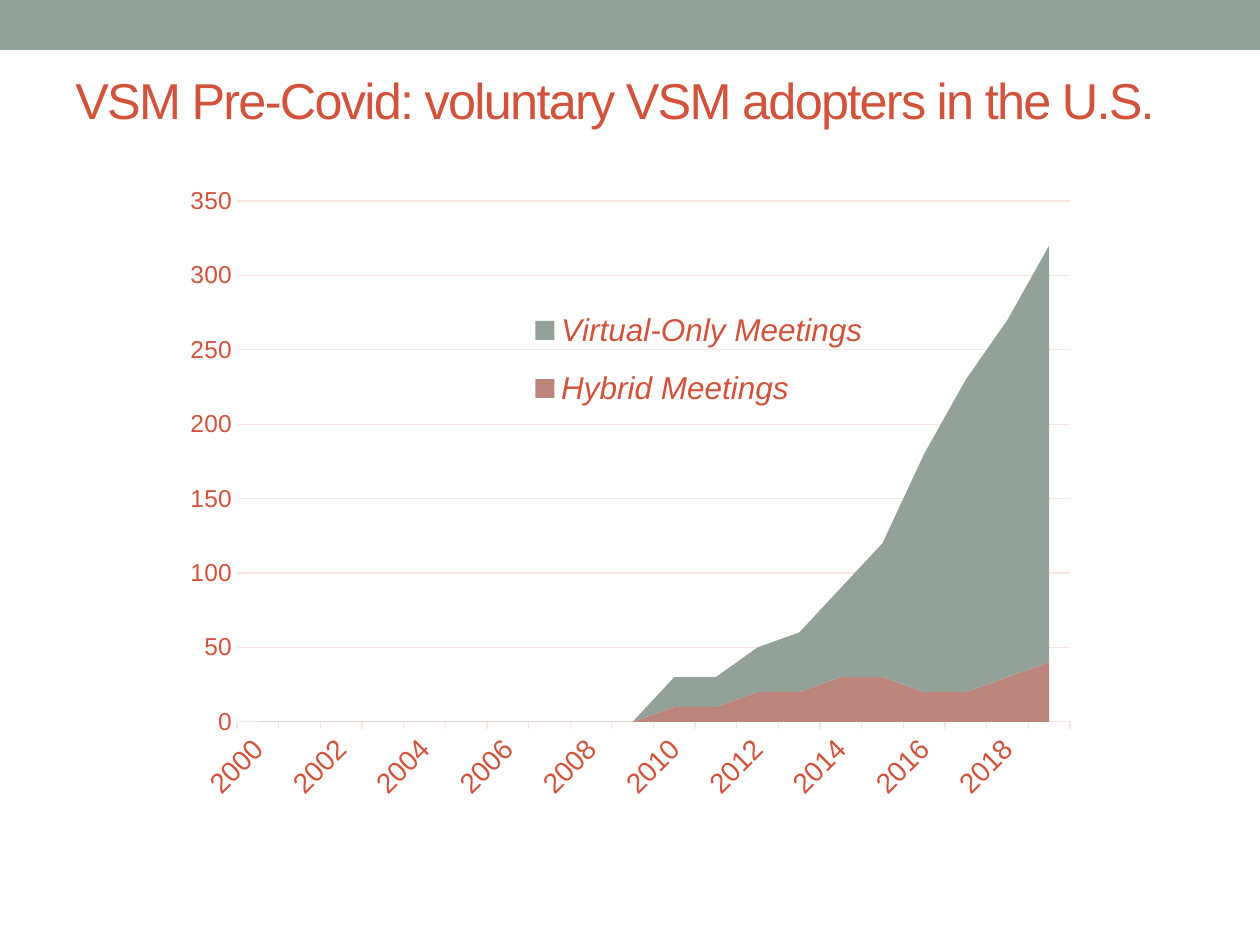
from dataclasses import dataclass

from lxml import etree
from pptx import Presentation
from pptx import util as u
from pptx.chart.data import CategoryChartData
from pptx.dml.color import RGBColor
from pptx.enum import chart as ch, shapes, text
from pptx.oxml.ns import qn

SCALE = 914400 // 126


@dataclass(frozen=True)
class Theme:
    font: str = "Arial"
    sage: str = "93A299"
    rose: str = "BD867C"
    red: str = "D2533C"
    grid: str = "F8E5E2"
    title: float = 28.8
    legend: int = 18
    years: int = 16
    count: int = 14
    hair: float = 0.75


def px(*nums):
    return [u.Emu(n * SCALE) for n in nums]


def put(obj, **vals):
    for name, val in vals.items():
        setattr(obj, name, val)


def place(node, spot, box, frame, inner=False):
    """Fix a chart part at box, in px, inside the chart frame."""
    for old in node.findall(qn("c:layout")):
        node.remove(old)
    layout = etree.Element(qn("c:layout"))
    manual = etree.SubElement(layout, qn("c:manualLayout"))
    left, top, wide, high = frame
    x, y, w, h = box
    vals = {"layoutTarget": "inner"} if inner else {}
    vals |= {"xMode": "edge", "yMode": "edge",
             "x": (x - left) / wide, "y": (y - top) / high,
             "w": w / wide, "h": h / high}
    for tag, val in vals.items():
        val = val if isinstance(val, str) else f"{val:.4f}"
        etree.SubElement(manual, qn(f"c:{tag}"), val=val)
    node.insert(spot, layout)


class Deck:
    def __init__(self, theme):
        self.theme = theme
        self.prs = Presentation()
        put(self.prs, slide_width=u.Inches(10), slide_height=u.Inches(7.5))
        self.slide = self.prs.slides.add_slide(self.prs.slide_layouts[6])

    def style(self, font, size, **more):
        put(font, name=self.theme.font, size=u.Pt(size), **more)
        font.color.rgb = RGBColor.from_string(self.theme.red)

    def paint(self, fill, color):
        fill.solid()
        fill.fore_color.rgb = RGBColor.from_string(color)

    def rule(self, line):
        line.width = u.Pt(self.theme.hair)
        line.color.rgb = RGBColor.from_string(self.theme.grid)

    def band(self, box):
        bar = self.slide.shapes.add_shape(shapes.MSO_SHAPE.RECTANGLE, *px(*box))
        bar.shadow.inherit = False
        self.paint(bar.fill, self.theme.sage)
        bar.line.fill.background()

    def title(self, words, box):
        frame = self.slide.shapes.add_textbox(*px(*box)).text_frame
        put(frame, word_wrap=True, vertical_anchor=text.MSO_ANCHOR.MIDDLE)
        run = frame.paragraphs[0].add_run()
        run.text = words
        self.style(run.font, self.theme.title)
        run.font._element.set("spc", "-100")

    def area(self, cats, series, box, plot, key):
        data = CategoryChartData()
        data.categories = cats
        for name, vals, _ in series:
            data.add_series(name, vals)
        chart = self.slide.shapes.add_chart(
            ch.XL_CHART_TYPE.AREA_STACKED, *px(*box), data).chart
        put(chart, has_title=False, has_legend=True)
        for part, (_, _, color) in zip(chart.plots[0].series, series):
            self.paint(part.format.fill, color)
            part.format.line.fill.background()
        place(chart._chartSpace.chart.plotArea, 0, plot, box, inner=True)
        self.years(chart.category_axis)
        self.counts(chart.value_axis)
        self.legend(chart.legend, key, box)

    def years(self, axis):
        put(axis, major_tick_mark=ch.XL_TICK_MARK.OUTSIDE,
            minor_tick_mark=ch.XL_TICK_MARK.NONE, has_major_gridlines=False)
        self.rule(axis.format.line)
        self.style(axis.tick_labels.font, self.theme.years)
        node = axis._element
        node.find(f"{qn('c:txPr')}/{qn('a:bodyPr')}").set("rot", "-2700000")
        skip = etree.Element(qn("c:tickLblSkip"), val="2")
        node.find(qn("c:noMultiLvlLbl")).addprevious(skip)

    def counts(self, axis):
        put(axis, major_tick_mark=ch.XL_TICK_MARK.NONE,
            minor_tick_mark=ch.XL_TICK_MARK.NONE, has_major_gridlines=True,
            minimum_scale=0, maximum_scale=350, major_unit=50)
        axis.format.line.fill.background()
        self.rule(axis.major_gridlines.format.line)
        self.style(axis.tick_labels.font, self.theme.count)
        axis._element.find(qn("c:crossBetween")).set("val", "between")

    def legend(self, legend, key, box):
        put(legend, position=ch.XL_LEGEND_POSITION.LEFT, include_in_layout=True)
        self.style(legend.font, self.theme.legend, italic=True)
        place(legend._element, 1, key, box)

    def save(self):
        self.prs.save("out.pptx")


def main():
    theme = Theme()
    deck = Deck(theme)
    deck.band((0, 0, 1260, 50))
    deck.title("VSM Pre-Covid: voluntary VSM adopters in the U.S.",
               (63, 68, 1134, 63))
    hybrid = [0] * 10 + [10, 10, 20, 20, 30, 30, 20, 20, 30, 40]
    virtual = [0] * 10 + [20, 20, 30, 40, 60, 90, 160, 210, 240, 280]
    deck.area([str(year) for year in range(2000, 2020)],
              [("Hybrid Meetings", hybrid, theme.rose),
               ("Virtual-Only Meetings", virtual, theme.sage)],
              box=(173, 174, 916, 638), plot=(237, 201, 833, 521),
              key=(523, 290, 352, 139))
    deck.save()


if __name__ == "__main__":
    main()
